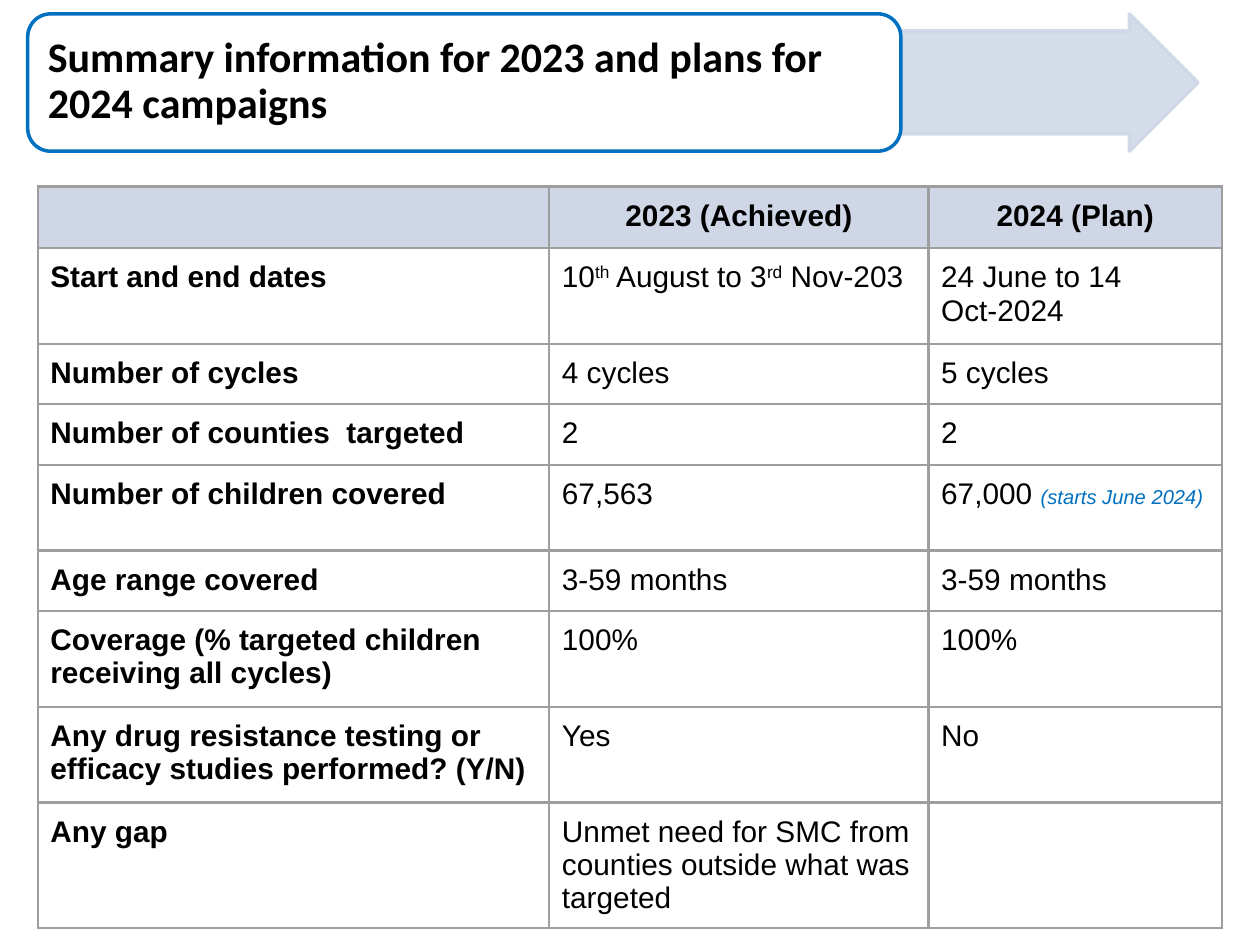
import dataclasses

import lxml.etree
import pptx
import pptx.dml.color
import pptx.enum.shapes
import pptx.enum.text
import pptx.oxml
import pptx.oxml.ns
import pptx.util

PX = 9144
SHAPE = pptx.enum.shapes.MSO_SHAPE
ALIGN = pptx.enum.text.PP_ALIGN
ANCHOR = pptx.enum.text.MSO_ANCHOR
qn = pptx.oxml.ns.qn


@dataclasses.dataclass(frozen=True)
class Theme:
    title_font: str = "Calibri"
    body_font: str = "Arial"
    title_size: float = 24
    body_size: float = 17
    note_size: float = 11.5
    ink: str = "000000"
    accent: str = "0070C0"
    pale: str = "CFD7E7"
    paper: str = "FFFFFF"
    border: str = "9E9E9E"
    outline: float = 2
    rule: float = 1.5


T = Theme()

COLUMNS = [406, 301, 233]
ROWS = [48, 76, 48, 48, 68, 48, 76, 76, 99]
NOTE = dict(size=T.note_size, color=T.accent, italic=True)
RAISED = dict(baseline=30)
CELLS = [
    ["", "2023 (Achieved)", "2024 (Plan)"],
    ["Start and end dates",
     [("10", {}), ("th", RAISED), (" August to 3", {}), ("rd", RAISED), (" Nov-203", {})],
     "24 June to 14 Oct-2024"],
    ["Number of cycles", "4 cycles", "5 cycles"],
    ["Number of counties  targeted", "2", "2"],
    ["Number of children covered", "67,563",
     [("67,000 ", {}), ("(starts June 2024)", NOTE)]],
    ["Age range covered", "3-59 months", "3-59 months"],
    ["Coverage (% targeted children receiving all cycles)", "100%", "100%"],
    ["Any drug resistance testing or efficacy studies performed? (Y/N)", "Yes", "No"],
    ["Any gap", "Unmet need for SMC from counties outside what was targeted", ""],
]


def px(*lengths):
    return [pptx.util.Emu(n * PX) for n in lengths]


def rgb(value):
    return pptx.dml.color.RGBColor.from_string(value)


def add_text(p, text, font=T.body_font, size=T.body_size, color=T.ink,
             bold=False, italic=False, baseline=0):
    r = p.add_run()
    r.text = text
    r.font.name = font
    r.font.size = pptx.util.Pt(size)
    r.font.color.rgb = rgb(color)
    r.font.bold = bold
    r.font.italic = italic
    if baseline:
        r.font._element.set("baseline", str(baseline * 1000))


def add_box(s, kind, box, fill, line, adjustments, opacity=100):
    sp = s.shapes.add_shape(kind, *px(*box))
    sp.shadow.inherit = False
    for i, value in enumerate(adjustments):
        sp.adjustments[i] = value
    sp.fill.solid()
    sp.fill.fore_color.rgb = rgb(fill)
    sp.line.color.rgb = rgb(line)
    sp.line.width = pptx.util.Pt(T.outline)
    if opacity < 100:
        for color in sp._element.spPr.iter(qn("a:srgbClr")):
            lxml.etree.SubElement(color, qn("a:alpha"), val=str(opacity * 1000))


def add_banner(s, left, top, width, height):
    panel = 693
    add_box(s, SHAPE.RIGHT_ARROW, (left + panel, top, width - panel, height),
            T.pale, T.pale, (0.75, 0.5), opacity=89)
    add_box(s, SHAPE.ROUNDED_RECTANGLE, (left, top, panel, height),
            T.paper, T.accent, (0.167,))
    title = s.shapes.title
    title.left, title.top, title.width, title.height = px(
        left + 6, top + 5, panel - 11, height - 11)
    s.shapes._spTree.append(title._element)
    tf = title.text_frame
    tf.word_wrap = True
    tf.auto_size = pptx.enum.text.MSO_AUTO_SIZE.NONE
    tf.vertical_anchor = ANCHOR.MIDDLE
    tf.margin_left, tf.margin_top, tf.margin_right, tf.margin_bottom = px(10, 5, 10, 5)
    p = tf.paragraphs[0]
    p.alignment = ALIGN.LEFT
    p.line_spacing = 0.9
    add_text(p, "Summary information for 2023 and plans for 2024 campaigns",
             font=T.title_font, size=T.title_size, bold=True)


def set_borders(cell):
    tcPr = cell._tc.get_or_add_tcPr()
    for i, side in enumerate(("lnL", "lnR", "lnT", "lnB")):
        ln = pptx.oxml.parse_xml(
            f'<a:{side} {pptx.oxml.ns.nsdecls("a")} w="{pptx.util.Pt(T.rule)}">'
            f'<a:solidFill><a:srgbClr val="{T.border}"/></a:solidFill>'
            f'<a:prstDash val="solid"/></a:{side}>')
        tcPr.insert(i, ln)


def fill_cell(cell, content, header, bold):
    cell.fill.solid()
    cell.fill.fore_color.rgb = rgb(T.pale if header else T.paper)
    cell.margin_left, cell.margin_top, cell.margin_right, cell.margin_bottom = px(10, 10, 10, 10)
    cell.vertical_anchor = ANCHOR.TOP
    set_borders(cell)
    p = cell.text_frame.paragraphs[0]
    p.alignment = ALIGN.CENTER if header else ALIGN.LEFT
    if not content:
        p._p.get_or_add_endParaRPr().set("sz", str(T.body_size * 100))
        return
    runs = [(content, {})] if isinstance(content, str) else content
    for text, fmt in runs:
        add_text(p, text, bold=bold, **fmt)


def add_summary_table(s, left, top):
    box = px(left, top, sum(COLUMNS), sum(ROWS))
    table = s.shapes.add_table(len(ROWS), len(COLUMNS), *box).table
    table.horz_banding = False
    for column, width in zip(table.columns, px(*COLUMNS)):
        column.width = width
    for row, height in zip(table.rows, px(*ROWS)):
        row.height = height
    for i, contents in enumerate(CELLS):
        for j, content in enumerate(contents):
            fill_cell(table.cell(i, j), content, header=i == 0, bold=i == 0 or j == 0)


def main():
    prs = pptx.Presentation()
    prs.slide_width, prs.slide_height = px(1000, 750)
    s = prs.slides.add_slide(prs.slide_layouts[5])
    add_banner(s, 22, 11, 929, 109)
    add_summary_table(s, 30, 148)
    prs.save("out.pptx")


if __name__ == "__main__":
    main()
